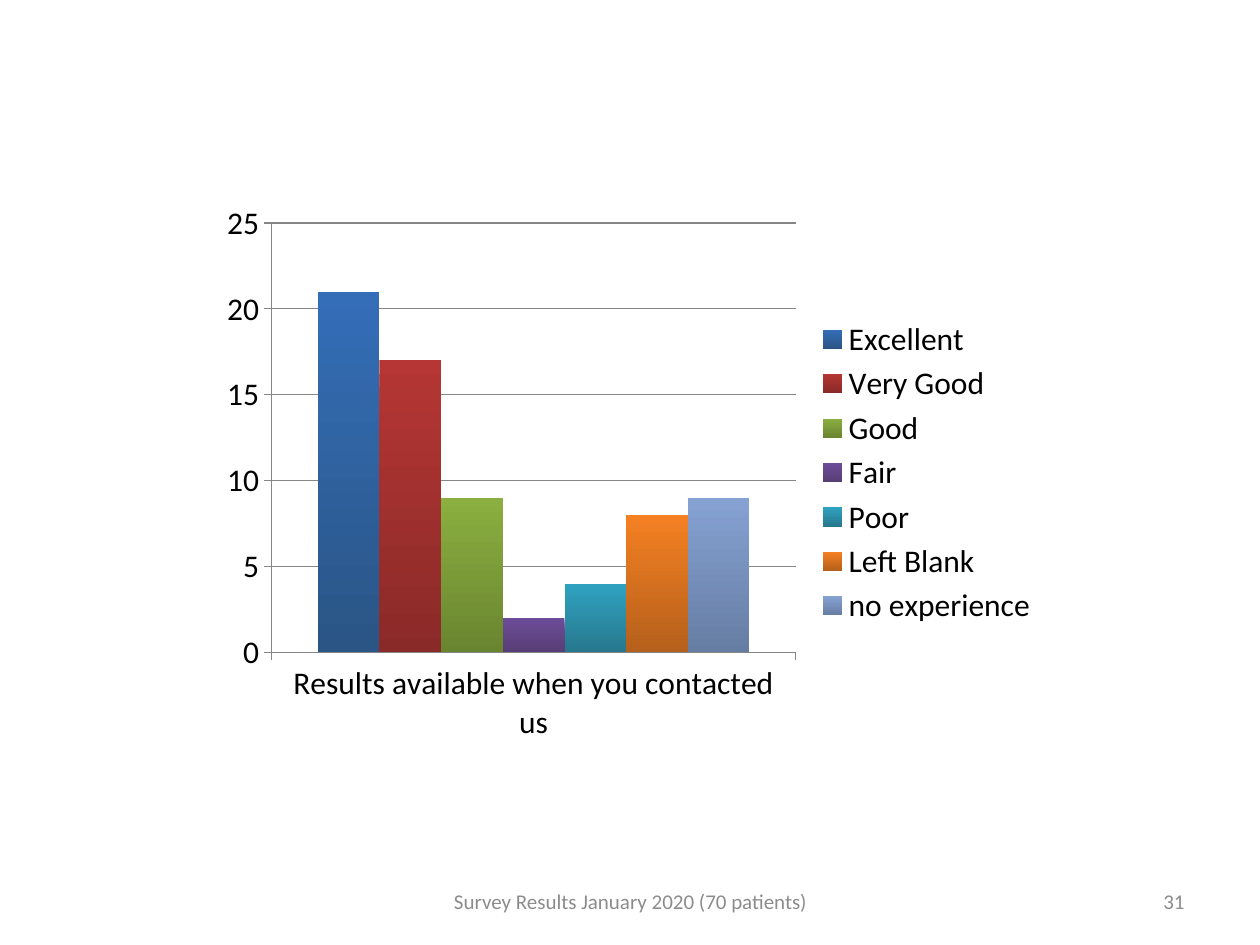
from typing import NamedTuple

from pptx import Presentation
from pptx.chart.data import CategoryChartData
from pptx.dml.color import RGBColor
from pptx.enum import chart as charts, text
from pptx.util import Inches, Pt

FONT = "Calibri"
BLACK = RGBColor(0x00, 0x00, 0x00)
FOOTER_GRAY = RGBColor(0x8C, 0x8C, 0x8C)
AXIS_GRAY = RGBColor(0x86, 0x86, 0x86)


class Rating(NamedTuple):
    name: str
    count: int
    top: RGBColor
    bottom: RGBColor


class Footer(NamedTuple):
    words: str
    left: float
    width: float
    align: text.PP_ALIGN


RATINGS = [
    Rating("Excellent", 21, RGBColor(0x34, 0x6E, 0xB8), RGBColor(0x2A, 0x55, 0x85)),
    Rating("Very Good", 17, RGBColor(0xB5, 0x36, 0x34), RGBColor(0x8A, 0x2A, 0x28)),
    Rating("Good", 9, RGBColor(0x8B, 0xAF, 0x40), RGBColor(0x6A, 0x85, 0x30)),
    Rating("Fair", 2, RGBColor(0x6D, 0x4C, 0x98), RGBColor(0x57, 0x3E, 0x75)),
    Rating("Poor", 4, RGBColor(0x2F, 0xA2, 0xC0), RGBColor(0x27, 0x78, 0x8D)),
    Rating("Left Blank", 8, RGBColor(0xF5, 0x80, 0x22), RGBColor(0xB5, 0x60, 0x1C)),
    Rating("no experience", 9, RGBColor(0x86, 0xA2, 0xD3), RGBColor(0x66, 0x7D, 0xA3)),
]
FOOTERS = [
    Footer("31", 7.17, 2.33, text.PP_ALIGN.RIGHT),
    Footer("Survey Results January 2020 (70 patients)", 3.42, 3.17, text.PP_ALIGN.CENTER),
]


def style_line(line) -> None:
    line.color.rgb = AXIS_GRAY
    line.width = Pt(0.75)


def add_rating_chart(page) -> None:
    data = CategoryChartData()
    data.categories = ["Results available when you contacted us"]
    for rating in RATINGS:
        data.add_series(rating.name, [rating.count])
    chart = page.shapes.add_chart(
        charts.XL_CHART_TYPE.COLUMN_CLUSTERED,
        Inches(1.67), Inches(1.53), Inches(6.67), Inches(4.44), data,
    ).chart
    chart.has_title = False
    chart.font.name = FONT
    chart.font.size = Pt(18)
    chart.font.color.rgb = BLACK

    # Legend
    chart.has_legend = True
    chart.legend.position = charts.XL_LEGEND_POSITION.RIGHT
    chart.legend.include_in_layout = False

    # Axes
    for axis in (chart.category_axis, chart.value_axis):
        axis.major_tick_mark = charts.XL_TICK_MARK.OUTSIDE
        axis.minor_tick_mark = charts.XL_TICK_MARK.NONE
        style_line(axis.format.line)
    chart.value_axis.minimum_scale = 0
    chart.value_axis.maximum_scale = 25
    chart.value_axis.major_unit = 5
    style_line(chart.value_axis.major_gridlines.format.line)

    # Columns shaded from top to bottom
    plot = chart.plots[0]
    plot.gap_width = 150
    plot.overlap = 0
    plot.vary_by_categories = False
    for series, rating in zip(plot.series, RATINGS):
        fill = series.format.fill
        fill.gradient()
        fill.gradient_angle = 270
        for stop, color in zip(fill.gradient_stops, (rating.top, rating.bottom)):
            stop.color.rgb = color


def add_footer(page, footer: Footer) -> None:
    box = page.shapes.add_textbox(
        Inches(footer.left), Inches(6.95), Inches(footer.width), Inches(0.4)
    )
    frame = box.text_frame
    frame.word_wrap = True
    frame.vertical_anchor = text.MSO_ANCHOR.MIDDLE
    para = frame.paragraphs[0]
    para.text = footer.words
    para.alignment = footer.align
    para.font.name = FONT
    para.font.size = Pt(12)
    para.font.color.rgb = FOOTER_GRAY


def main() -> None:
    deck = Presentation()
    deck.slide_width = Inches(10)
    deck.slide_height = Inches(7.5)
    page = deck.slides.add_slide(deck.slide_layouts[6])
    add_rating_chart(page)
    for footer in FOOTERS:
        add_footer(page, footer)
    deck.save("out.pptx")


if __name__ == "__main__":
    main()
